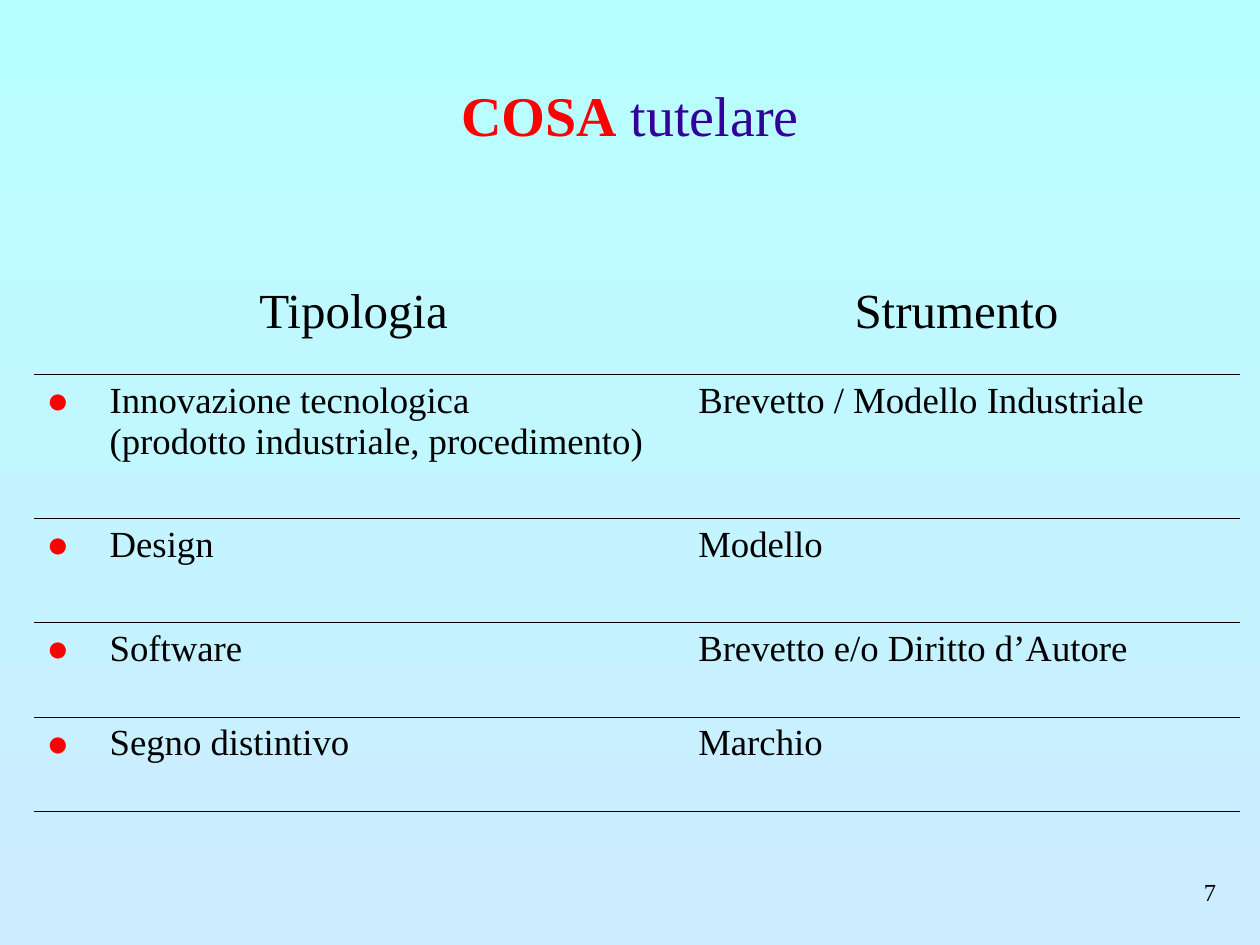
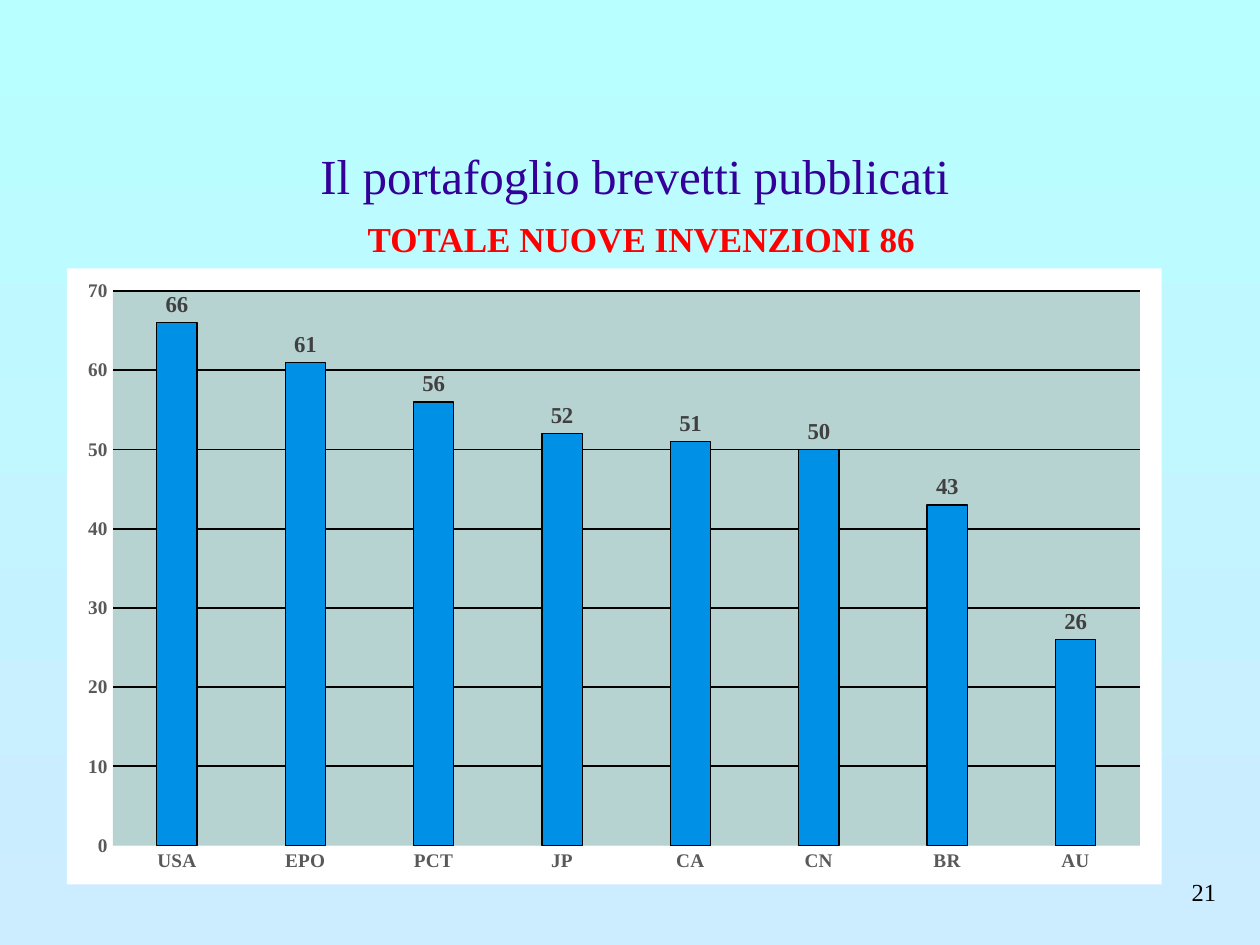
import collections
import lxml.etree
import pptx
import pptx.chart.data
import pptx.dml.color
import pptx.enum.chart
import pptx.enum.text
import pptx.oxml
import pptx.oxml.ns
import pptx.util

# Shared look: a grid of 100 columns by 75 rows covers the slide
COLUMNS, ROWS = 100, 75
SLIDE_WIDTH, SLIDE_HEIGHT = pptx.util.Inches(10), pptx.util.Inches(7.5)
FONT = "Times New Roman"
COLORS = {
    "sky_top": "B8FFFF", "sky_bottom": "CCECFF",
    "title": "330099", "accent": "FF0000", "text": "000000",
    "paper": "FFFFFF", "plot": "B6D3D2", "bar": "0090E6",
    "axis_text": "595959", "axis_line": "D9D9D9", "label": "404040",
}
NO_TABLE_STYLE = "{2D5ABB26-0587-4C30-8999-92F81FD0307C}"
ALIGN = pptx.enum.text.PP_ALIGN
ANCHOR = pptx.enum.text.MSO_ANCHOR
Box = collections.namedtuple("Box", "left top width height")

NUMBER_BOX = Box(76.7, 68.3, 20.8, 5)

PROTECTION_HEADER = ("Tipologia", "Strumento")
PROTECTION_ROWS = [
    ("Innovazione tecnologica\v(prodotto industriale, procedimento)",
     "Brevetto / Modello Industriale"),
    ("Design", "Modello"),
    ("Software", "Brevetto e/o Diritto d’Autore"),
    ("Segno distintivo", "Marchio"),
]
PATENTS = {"USA": 66, "EPO": 61, "PCT": 56, "JP": 52,
           "CA": 51, "CN": 50, "BR": 43, "AU": 26}


def across(columns):
    return round(SLIDE_WIDTH * columns / COLUMNS)


def down(rows):
    return round(SLIDE_HEIGHT * rows / ROWS)


def place(box):
    return across(box.left), down(box.top), across(box.width), down(box.height)


def rgb(name):
    return pptx.dml.color.RGBColor.from_string(COLORS[name])


def style(font, size, color, bold=False):
    font.name, font.size, font.bold = FONT, pptx.util.Pt(size), bold
    font.color.rgb = rgb(color)


def xml(tag, body="", attributes=""):
    """Parse one element in the namespace of its prefix."""
    return pptx.oxml.parse_xml(
        f"<{tag} {pptx.oxml.ns.nsdecls('a', 'c')} {attributes}>{body}</{tag}>")


def solid(color):
    return f'<a:solidFill><a:srgbClr val="{COLORS[color]}"/></a:solidFill>'


def add_page(deck, number):
    """Blank page with the sky gradient and its number."""
    page = deck.slides.add_slide(deck.slide_layouts[6])
    fill = page.background.fill
    fill.gradient()
    fill.gradient_angle = 270
    for stop, color in zip(fill.gradient_stops, ("sky_top", "sky_bottom")):
        stop.color.rgb = rgb(color)
    add_text(page, NUMBER_BOX, [(str(number), "text", False)], 14, ALIGN.RIGHT)
    return page


def add_text(page, box, spans, size, align=ALIGN.CENTER, anchor=ANCHOR.MIDDLE):
    """One line of text made of (text, color, bold) spans."""
    frame = page.shapes.add_textbox(*place(box)).text_frame
    frame.word_wrap = True
    frame.vertical_anchor = anchor
    para = frame.paragraphs[0]
    para.alignment = align
    for text, color, bold in spans:
        span = para.add_run()
        span.text = text
        style(span.font, size, color, bold)


def indent(para, left, first=0, bullet=False):
    """Set the left indent in columns, with a red dot if asked."""
    properties = para._p.get_or_add_pPr()
    properties.set("marL", str(across(left)))
    properties.set("indent", str(across(first)))
    if bullet:
        marks = [
            xml("a:buClr", f'<a:srgbClr val="{COLORS["accent"]}"/>'),
            xml("a:buSzPct", attributes='val="102000"'),
            xml("a:buFont", attributes=f'typeface="{FONT}"'),
            xml("a:buChar", attributes='char="●"'),
        ]
        for position, mark in enumerate(marks):
            properties.insert(position, mark)


def fill_cell(cell, text, size):
    """Clear cell with a thin rule below; returns its paragraph."""
    cell.fill.background()
    cell._tc.get_or_add_tcPr().insert(
        0, xml("a:lnB", solid("text"), f'w="{pptx.util.Pt(0.5)}"'))
    cell.text = text
    para = cell.text_frame.paragraphs[0]
    style(para.font, size, "text")
    return para


def add_protection_table(page, box):
    table = page.shapes.add_table(
        len(PROTECTION_ROWS) + 1, len(PROTECTION_HEADER), *place(box)).table
    table.first_row = table.horz_banding = False
    table._tbl.tblPr.find(pptx.oxml.ns.qn("a:tableStyleId")).text = NO_TABLE_STYLE
    for column, share in zip(table.columns, (0.53, 0.47)):
        column.width = across(box.width * share)
    for row, share in zip(table.rows, (0.18, 0.27, 0.196, 0.177, 0.177)):
        row.height = down(box.height * share)
    for index, text in enumerate(PROTECTION_HEADER):
        fill_cell(table.cell(0, index), text, 28).alignment = ALIGN.CENTER
    for index, (kind, tool) in enumerate(PROTECTION_ROWS, 1):
        indent(fill_cell(table.cell(index, 0), kind, 21), 5, -5, bullet=True)
        indent(fill_cell(table.cell(index, 1), tool, 21), 1)


def paint_chart(chart):
    """White paper, tinted plot area and a fixed inner layout."""
    space = chart._chartSpace
    space.chart.addnext(xml("c:spPr", solid("paper") + "<a:ln><a:noFill/></a:ln>"))
    plot_area = space.chart.plotArea
    plot_area.append(xml("c:spPr", solid("plot") + "<a:ln><a:noFill/></a:ln>"))
    for layout in plot_area.findall(pptx.oxml.ns.qn("c:layout")):
        plot_area.remove(layout)
    shares = {"x": 0.042, "y": 0.037, "w": 0.938, "h": 0.9}
    places = '<c:layoutTarget val="inner"/>'
    places += "".join(f'<c:{key}Mode val="edge"/>' for key in "xy")
    places += "".join(f'<c:{key} val="{share}"/>' for key, share in shares.items())
    plot_area.insert(0, xml("c:layout", f"<c:manualLayout>{places}</c:manualLayout>"))


def add_patent_chart(page, box):
    data = pptx.chart.data.CategoryChartData()
    data.categories = list(PATENTS)
    data.add_series("Brevetti", list(PATENTS.values()))
    chart = page.shapes.add_chart(
        pptx.enum.chart.XL_CHART_TYPE.COLUMN_CLUSTERED, *place(box), data).chart
    chart.has_legend = chart.has_title = False
    style(chart.font, 10, "text")
    paint_chart(chart)

    # Axes
    for axis in (chart.category_axis, chart.value_axis):
        axis.major_tick_mark = pptx.enum.chart.XL_TICK_MARK.NONE
        style(axis.tick_labels.font, 11, "axis_text", True)
    line = chart.category_axis.format.line
    line.color.rgb, line.width = rgb("axis_line"), pptx.util.Pt(0.75)
    values = chart.value_axis
    values.minimum_scale, values.maximum_scale, values.major_unit = 0, 70, 10
    values.format.line.fill.background()
    grid = values.major_gridlines.format.line
    grid.color.rgb, grid.width = rgb("text"), pptx.util.Pt(1)

    # Columns and their labels
    plot = chart.plots[0]
    plot.gap_width, plot.overlap, plot.vary_by_categories = 219, -27, False
    bars = plot.series[0].format
    bars.fill.solid()
    bars.fill.fore_color.rgb = rgb("bar")
    bars.line.color.rgb, bars.line.width = rgb("text"), pptx.util.Pt(0.75)
    plot.has_data_labels = True
    labels = plot.data_labels
    labels.show_value = True
    labels.position = pptx.enum.chart.XL_LABEL_POSITION.OUTSIDE_END
    style(labels.font, 13, "label", True)


def build_protection_page(deck):
    page = add_page(deck, 7)
    add_protection_table(page, Box(2.7, 22.1, 95.7, 42.3))
    add_text(page, Box(0, 2.8, 100, 12.5),
             [("COSA", "accent", True), (" tutelare", "title", False)], 32)


def build_patent_page(deck):
    page = add_page(deck, 21)
    add_text(page, Box(0.4, 7.4, 100, 9.3),
             [("Il portafoglio brevetti pubblicati", "title", False)],
             28, anchor=ANCHOR.BOTTOM)
    add_patent_chart(page, Box(5.3, 21.3, 86.9, 48.9))
    add_text(page, Box(0.9, 11.8, 100, 9.3),
             [("TOTALE NUOVE INVENZIONI 86", "accent", True)],
             20, anchor=ANCHOR.BOTTOM)


def main():
    deck = pptx.Presentation()
    deck.slide_width, deck.slide_height = SLIDE_WIDTH, SLIDE_HEIGHT
    build_protection_page(deck)
    build_patent_page(deck)
    deck.save("out.pptx")


if __name__ == "__main__":
    main()
